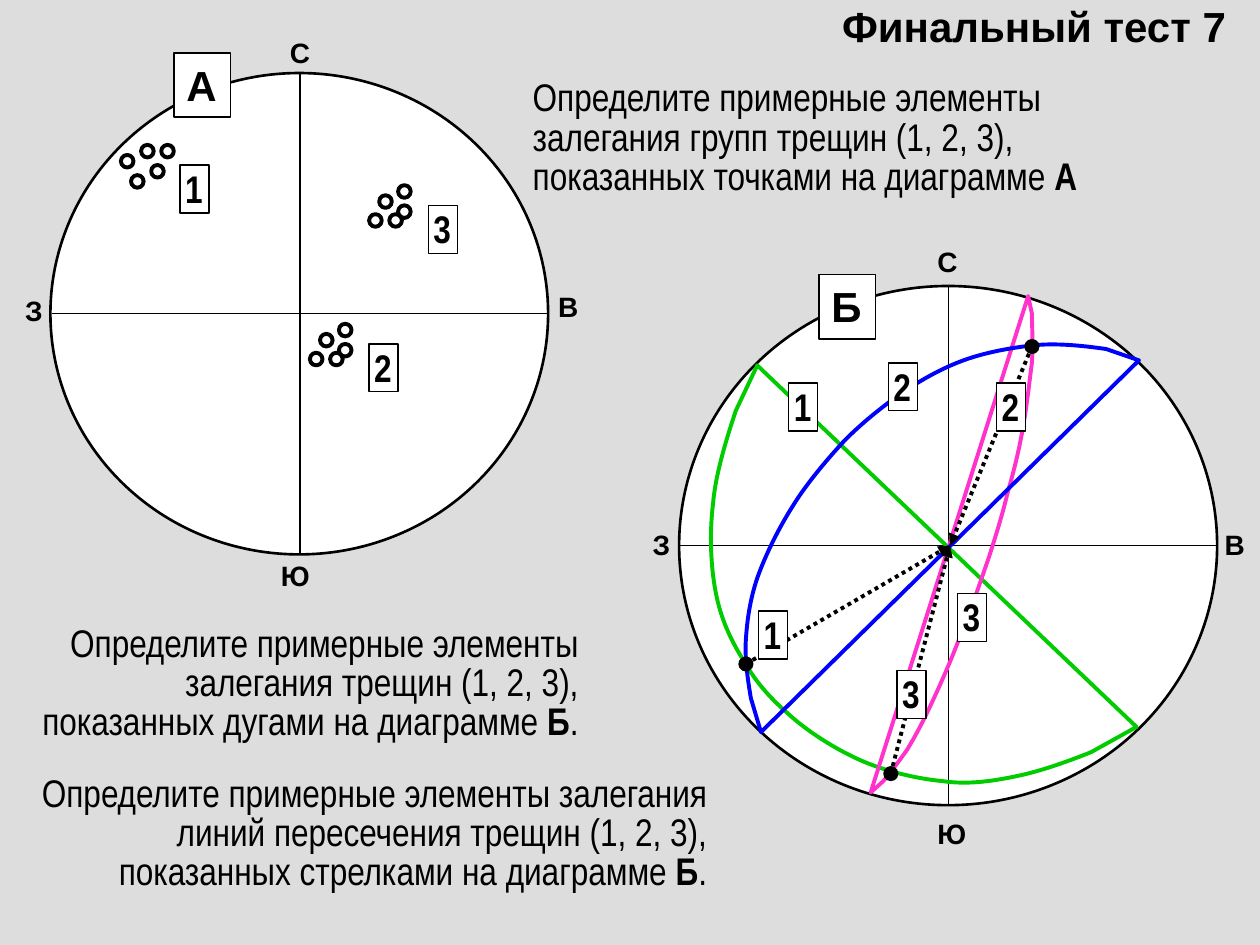
from dataclasses import dataclass

from pptx import Presentation
from pptx.dml.color import RGBColor
from pptx.enum.dml import MSO_LINE_DASH_STYLE as Dash
from pptx.enum.shapes import MSO_CONNECTOR as Connector, MSO_SHAPE as Shape
from pptx.enum.text import MSO_ANCHOR as Anchor, MSO_AUTO_SIZE as AutoSize, PP_ALIGN as Align
from pptx.oxml.ns import qn
from pptx.util import Pt
from lxml.etree import SubElement

PX = 9144  # 100 px to the inch


@dataclass(frozen=True)
class Theme:
    backdrop: str = "DDDDDD"
    ink: str = "000000"
    paper: str = "FFFFFF"
    green: str = "00CC00"
    pink: str = "FF33CC"
    blue: str = "0000FF"
    sans: str = "Arial"
    narrow: str = "Arial Narrow"
    title: int = 24
    body: int = 22
    compass: int = 16
    thin: float = 0.75
    rim: float = 1.5
    bold: float = 2.25


THEME = Theme()

# Poles of cracks: cluster origin in diagram А and the circles inside it
TRIO = [(8, 8), (23, 0), (23, 16), (16, 23), (0, 23)]
CLUSTERS = [
    ("1", (56, 57), [(0, 8), (32, 0), (24, 16), (8, 24), (16, 0)]),
    ("2", (206, 199), TRIO),
    ("3", (253, 89), TRIO),
]

# Great circles in diagram Б: start, line end, Bezier triples, last corner
ARCS = [
    (THEME.green, [
        (62, 63), (45, 99), (39, 117), (29, 148), (27, 172), (24, 196), (25, 222), (29, 243),
        (33, 264), (41, 281), (51, 297), (60, 313), (71, 326), (86, 339), (101, 353), (123, 367),
        (143, 376), (163, 385), (188, 391), (209, 393), (229, 396), (249, 393), (268, 389),
        (288, 385), (312, 376), (327, 370), (363, 350)]),
    (THEME.pink, [
        (277, 8), (280, 22), (280, 31), (281, 46), (280, 61), (278, 76), (276, 95), (273, 112),
        (270, 129), (266, 146), (261, 163), (257, 180), (252, 196), (246, 215), (239, 235),
        (231, 259), (223, 278), (216, 297), (207, 317), (200, 332), (193, 347), (187, 358),
        (181, 368), (174, 378), (167, 387), (162, 393), (152, 402)]),
    (THEME.blue, [
        (365, 59), (339, 50), (325, 48), (302, 45), (282, 47), (263, 49), (241, 53), (223, 60),
        (205, 67), (190, 76), (175, 86), (160, 97), (146, 108), (132, 122), (118, 137), (101, 157),
        (90, 175), (78, 194), (68, 215), (62, 232), (56, 250), (54, 266), (53, 281), (52, 297),
        (55, 315), (57, 327), (65, 354)]),
]
CROSSINGS = [(53, 300), (168, 387), (280, 48)]
ARC_NUMBERS = [("1", 87, 77), ("2", 166, 61), ("3", 221, 244)]
ARROW_NUMBERS = [("1", 63, 258), ("2", 252, 77), ("3", 173, 305)]


def color(code):
    return RGBColor.from_string(code)


def scaled(*lengths):
    return [round(length * PX) for length in lengths]


def style_span(span, font, size, bold):
    span.font.name, span.font.size, span.font.bold = font, Pt(size), bold
    span.font.color.rgb = color(THEME.ink)


def set_frame(frame, insets, wrap):
    frame.word_wrap = wrap
    frame.auto_size = AutoSize.SHAPE_TO_FIT_TEXT
    frame.vertical_anchor = Anchor.TOP
    (frame.margin_left, frame.margin_top,
     frame.margin_right, frame.margin_bottom) = scaled(*insets)


def add_figure(page, kind, box, fill=None, weight=None):
    figure = page.shapes.add_shape(kind, *scaled(*box))
    figure.shadow.inherit = False
    if fill:
        figure.fill.solid()
        figure.fill.fore_color.rgb = color(fill)
    else:
        figure.fill.background()
    if weight:
        figure.line.color.rgb = color(THEME.ink)
        figure.line.width = Pt(weight)
    else:
        figure.line.fill.background()
    return figure


def add_line(page, start, end, weight):
    line = page.shapes.add_connector(Connector.STRAIGHT, *scaled(*start, *end))
    SubElement(line._element.spPr, qn("a:effectLst"))
    line.line.color.rgb = color(THEME.ink)
    line.line.width = Pt(weight)
    return line


def add_tag(page, text, box, font, size, insets):
    tag = add_figure(page, Shape.RECTANGLE, box, THEME.paper, THEME.thin)
    set_frame(tag.text_frame, insets, False)
    tag.text_frame.text = text
    para = tag.text_frame.paragraphs[0]
    para.alignment = Align.LEFT
    style_span(para.runs[0], font, size, True)


def add_number(page, text, left, top):
    add_tag(page, text, (left, top, 23, 38), THEME.narrow, THEME.body, (4, 0, 4, 0))


def add_letter(page, text, left, top):
    add_tag(page, text, (left, top, 45, 51), THEME.sans, THEME.title, (10, 5, 10, 5))


def add_text(page, box, spans, font, size, align=Align.LEFT, spacing=None,
             insets=(10, 5, 10, 5), wrap=True):
    """spans: (text, bold) pairs of one paragraph."""
    frame = page.shapes.add_textbox(*scaled(*box)).text_frame
    set_frame(frame, insets, wrap)
    para = frame.paragraphs[0]
    para.alignment, para.line_spacing = align, spacing
    for text, bold in spans:
        span = para.add_run()
        span.text = text
        style_span(span, font, size, bold)
    return frame


def add_net(page, box, compass):
    """Circle with its two axes and the four compass letters."""
    left, top, width, height = box
    add_figure(page, Shape.OVAL, box, THEME.paper, THEME.rim)
    for letter, (x, y, label_width) in zip("ВЗСЮ", compass):
        add_text(page, (left + x, top + y, label_width, 27), [(letter, True)],
                 THEME.sans, THEME.compass, insets=(0, 0, 0, 0), wrap=False)
    middle_x, middle_y = left + width // 2 + 1, top + height // 2
    add_line(page, (left + 1, middle_y), (left + width, middle_y), THEME.thin)
    add_line(page, (middle_x, top), (middle_x, top + height), THEME.thin)


def add_arc(page, left, top, points, shade):
    places = [(left + x, top + y) for x, y in points]
    builder = page.shapes.build_freeform(*places[0], scale=PX)
    builder.add_line_segments(places[1:], close=True)
    arc = builder.convert_to_shape()
    arc.shadow.inherit = False
    arc.fill.background()
    arc.line.color.rgb = color(shade)
    arc.line.width = Pt(THEME.bold)
    # Turn each triple of inner points into one Bezier curve
    steps = list(arc._element.iter(qn("a:lnTo")))[1:len(points) - 2]
    for first, second, third in zip(steps[::3], steps[1::3], steps[2::3]):
        curve = first.makeelement(qn("a:cubicBezTo"), {})
        first.addprevious(curve)
        for step in (first, second, third):
            curve.append(step[0])
            step.getparent().remove(step)


def add_pole_diagram(page, box):
    left, top = box[:2]
    add_net(page, box, [(403, 172, 16), (-20, 175, 14), (190, -30, 16), (183, 385, 23)])
    for number, (x, y), poles in CLUSTERS:
        for dx, dy in poles:
            add_figure(page, Shape.OVAL, (left + x + dx, top + y + dy, 10, 10),
                       THEME.paper, THEME.bold)
        add_number(page, number, left + x + 47, top + y + 16)
    add_letter(page, "А", left + 98, top - 16)


def add_arc_diagram(page, box):
    left, top = box[:2]
    add_net(page, box, [(433, 192, 16), (-21, 192, 14), (205, -33, 16), (205, 421, 23)])
    for shade, points in ARCS:
        add_arc(page, left, top, points, shade)
    # Crossing points, each with a dotted arrow to the centre
    for x, y in CROSSINGS:
        add_figure(page, Shape.OVAL, (left + x - 6, top + y - 6, 12, 12), THEME.ink)
        arrow = add_line(page, (left + x, top + y), (left + 215, top + 206), THEME.bold)
        arrow.line.dash_style = Dash.ROUND_DOT
        arrow.line._get_or_add_ln().find(qn("a:prstDash")).set("val", "sysDot")
        SubElement(arrow.line._get_or_add_ln(), qn("a:tailEnd"), type="triangle")
    for number, x, y in ARC_NUMBERS + ARROW_NUMBERS:
        add_number(page, number, left + x, top + y)
    add_letter(page, "Б", left + 111, top - 9)


def add_task(page, box, text, letter, ending="", align=Align.RIGHT):
    spans = [(text, False), (letter, True)] + ([(ending, False)] if ending else [])
    add_text(page, box, spans, THEME.narrow, THEME.body, align, 0.85)


def main():
    deck = Presentation()
    deck.slide_width, deck.slide_height = scaled(1000, 750)
    page = deck.slides.add_slide(deck.slide_layouts[6])
    page.background.fill.solid()
    page.background.fill.fore_color.rgb = color(THEME.backdrop)

    add_pole_diagram(page, (40, 58, 395, 382))
    add_arc_diagram(page, (539, 227, 427, 412))

    title = add_text(page, (657, 5, 335, 40), [("Финальный тест 7", True)], THEME.sans,
                     THEME.title, Align.RIGHT, 0.75, insets=(10, 5, 19, 5))
    title.vertical_anchor = Anchor.MIDDLE
    add_task(page, (413, 59, 473, 103), "Определите примерные элементы залегания групп "
             "трещин (1, 2, 3), показанных точками на диаграмме ", "А", align=Align.LEFT)
    add_task(page, (12, 492, 457, 103), "Определите примерные элементы залегания "
             "трещин (1, 2, 3), показанных дугами на диаграмме ", "Б", ".")
    add_task(page, (12, 611, 559, 103), "Определите примерные элементы залегания линий "
             "пересечения трещин (1, 2, 3), показанных стрелками на диаграмме ", "Б", ".")
    deck.save("out.pptx")


if __name__ == "__main__":
    main()
